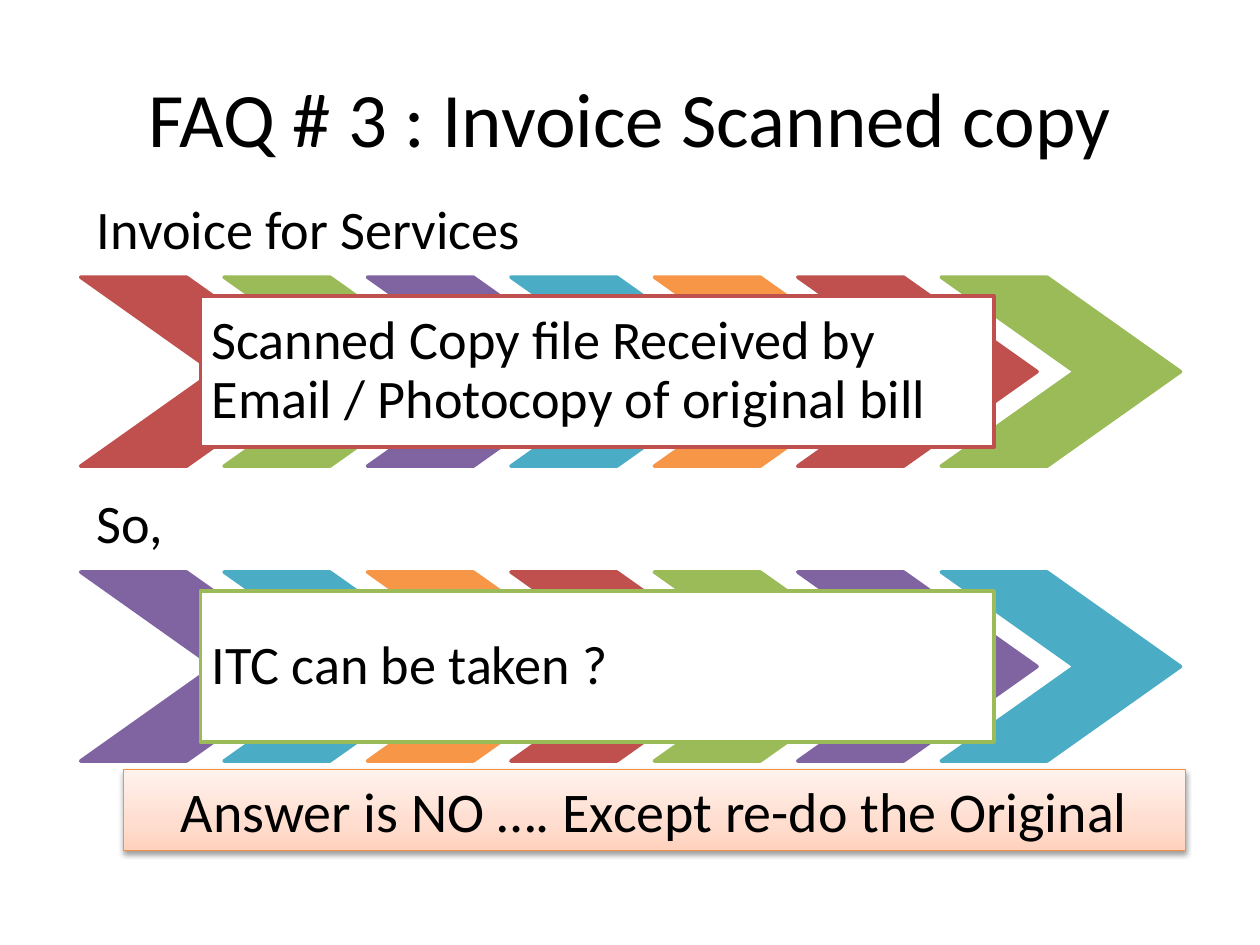
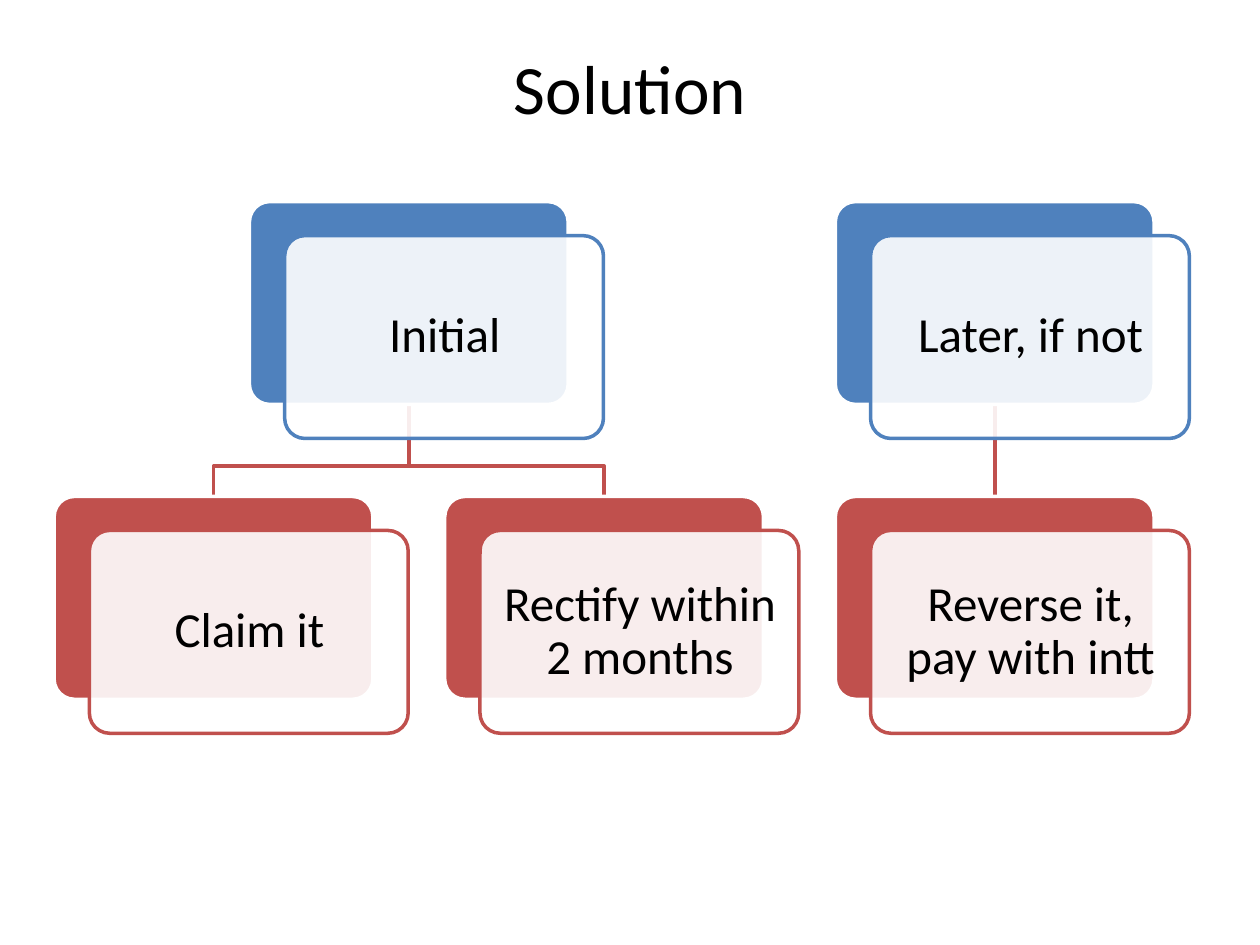
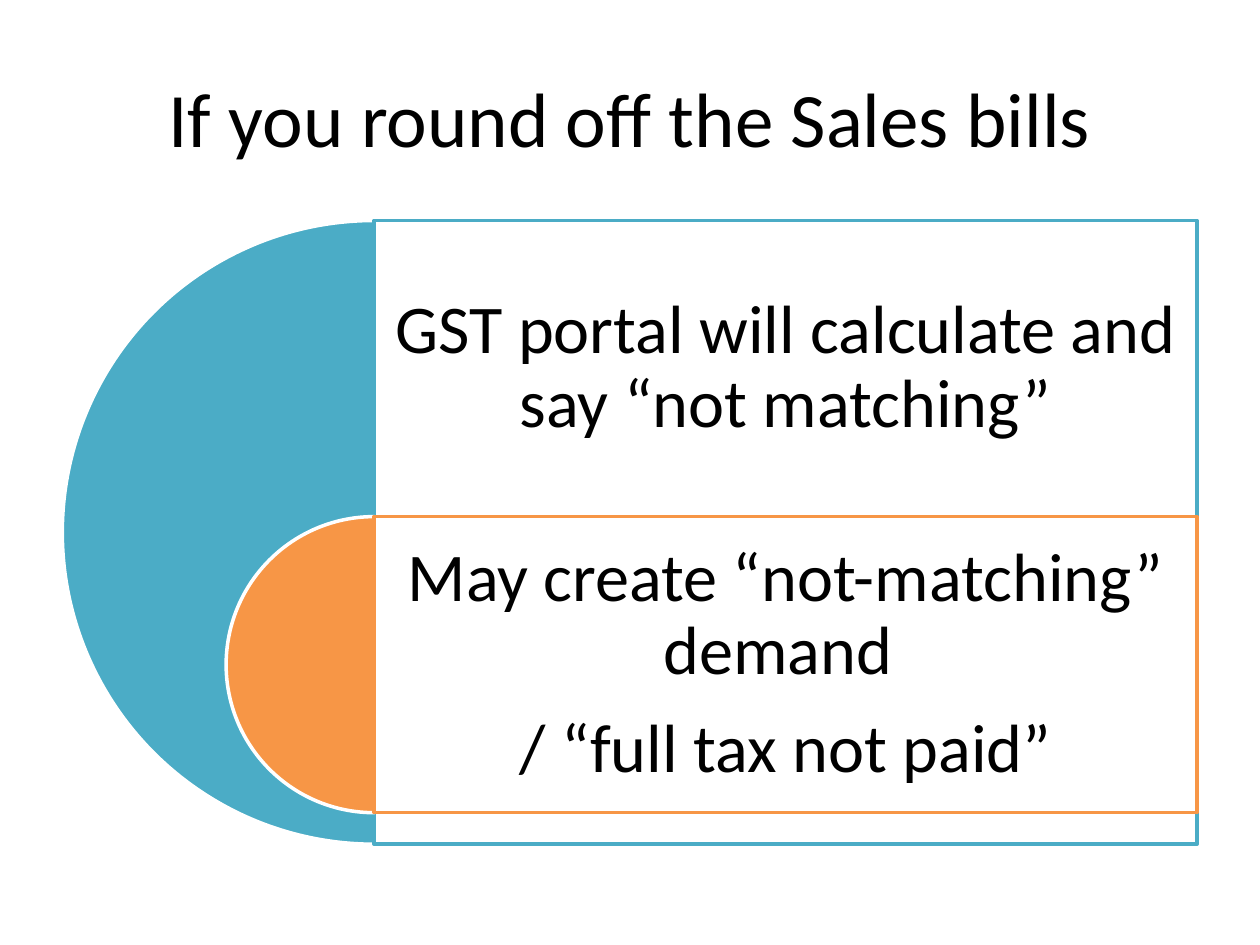
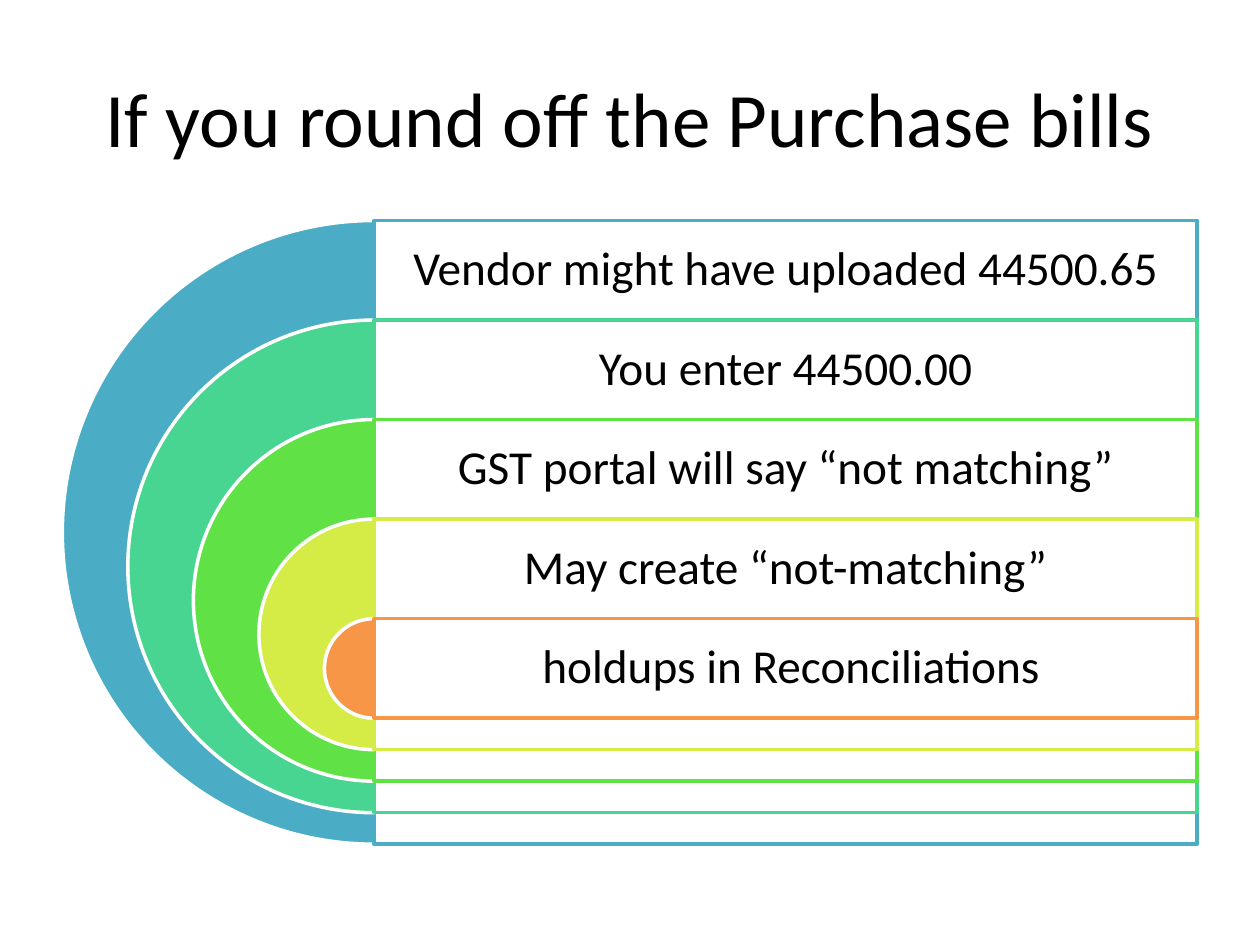
"""Builds four slides on invoice copies, their solution and rounding off bills."""
import copy

import lxml.etree
import pptx
import pptx.dml.color
import pptx.enum.shapes
import pptx.enum.text
import pptx.oxml.ns
import pptx.util

RGB = pptx.dml.color.RGBColor
BLACK = RGB(0x00, 0x00, 0x00)
WHITE = RGB(0xFF, 0xFF, 0xFF)
BLUE = RGB(0x4F, 0x81, 0xBD)
RED = RGB(0xC0, 0x50, 0x4D)
GREEN = RGB(0x9B, 0xBB, 0x59)
PURPLE = RGB(0x80, 0x64, 0xA2)
TEAL = RGB(0x4B, 0xAC, 0xC6)
ORANGE = RGB(0xF7, 0x96, 0x46)
MINT = RGB(0x48, 0xD4, 0x91)
LIME = RGB(0x60, 0xE1, 0x46)
LEMON = RGB(0xD5, 0xEC, 0x46)
AMBER = RGB(0xF6, 0x92, 0x40)
BLUSH = [(0, RGB(0xFF, 0xD2, 0xBD)), (0.35, RGB(0xFF, 0xDE, 0xD0)), (1, RGB(0xFF, 0xF2, 0xED))]
HUES = [RED, GREEN, PURPLE, TEAL, ORANGE]

FONT = "Calibri"
Inches = pptx.util.Inches
Pt = pptx.util.Pt
SHAPE = pptx.enum.shapes.MSO_SHAPE
ALIGN = pptx.enum.text.PP_ALIGN
ANCHOR = pptx.enum.text.MSO_ANCHOR
qn = pptx.oxml.ns.qn


def write(frame, text, size=31, align=ALIGN.CENTER, anchor=ANCHOR.MIDDLE, inset=None, lead=0.9):
    """Fill a text frame, one paragraph per line of text."""
    frame.word_wrap = True
    frame.vertical_anchor = anchor
    if inset is not None:
        frame.margin_left = frame.margin_right = Inches(inset)
        frame.margin_top = frame.margin_bottom = Inches(inset)
    for i, line in enumerate(text.split("\n")):
        para = frame.add_paragraph() if i else frame.paragraphs[0]
        para.alignment = align
        para.line_spacing = lead
        para.space_after = Pt(0.35 * size) if lead < 1 else Pt(0)
        run = para.add_run()
        run.text = line
        run.font.name = FONT
        run.font.size = Pt(size)
        run.font.color.rgb = BLACK


def draw(slide, kind, box, fill, line, width=2, turns=(), alpha=100):
    """Add a preset shape without shadow; box is left, top, width, height."""
    shape = slide.shapes.add_shape(kind, *map(Inches, box))
    shape.shadow.inherit = False
    for i, turn in enumerate(turns):
        shape.adjustments[i] = turn
    shape.fill.solid()
    shape.fill.fore_color.rgb = fill
    shape.line.color.rgb = line
    shape.line.width = Pt(width)
    if alpha < 100:
        tint = shape.element.spPr.find(qn("a:solidFill"))[0]
        lxml.etree.SubElement(tint, qn("a:alpha"), val=str(alpha * 1000))
    return shape


deck = pptx.Presentation()
deck.slide_width = Inches(10)
deck.slide_height = Inches(7.5)

slides = []
for title, size, height in [
    ("FAQ # 3 : Invoice Scanned copy", 44, 1.25),
    ("Solution", 39.6, 0.77),
    ("If you round off the Sales bills", 44, 1.25),
    ("If you round off the Purchase bills", 44, 1.25),
]:
    slide = deck.slides.add_slide(deck.slide_layouts[5])
    head = slide.shapes.title
    head.left, head.top, head.width, head.height = map(Inches, (0.5, 0.3, 9, height))
    write(head.text_frame, title, size=size, lead=1)
    slides.append(slide)
faq, fix, sales, buys = slides

rows = [
    ("Invoice for Services", "Scanned Copy file Received by Email / Photocopy of original bill"),
    ("So,", "ITC can be taken ?"),
]
for row, (label, text) in enumerate(rows):
    top = 1.46 + 2.34 * row
    area = faq.shapes.add_textbox(*map(Inches, (0.64, top, 8.1, 0.74)))
    write(area.text_frame, label, align=ALIGN.LEFT, anchor=ANCHOR.BOTTOM, inset=0.13)
    for i in range(7):
        hue = HUES[(i + 2 * row) % 5]
        draw(faq, SHAPE.CHEVRON, (0.64 + 6.83 / 6 * i, top + 0.74, 1.9, 1.5), hue, hue, turns=[0.706])
    box = (1.59, top + 0.89, 6.3, 1.2)
    draw(faq, SHAPE.RECTANGLE, box, WHITE, HUES[row])
    area = faq.shapes.add_textbox(*map(Inches, box))
    write(area.text_frame, text, align=ALIGN.LEFT, inset=0.09)

reply = draw(faq, SHAPE.RECTANGLE, (0.98, 6.11, 8.43, 0.64), WHITE, AMBER, width=0.75)
write(reply.text_frame, "Answer is NO …. Except re-do the Original", size=32, lead=1)
reply.fill.gradient()
reply.fill.gradient_angle = 90
stops = reply.element.spPr.find(qn("a:gradFill")).find(qn("a:gsLst"))
stops.append(copy.deepcopy(stops[0]))
for stop, (place, hue) in zip(reply.fill.gradient_stops, BLUSH):
    stop.position = place
    stop.color.rgb = hue
glow = lxml.etree.SubElement(
    reply.element.spPr.find(qn("a:effectLst")), qn("a:outerShdw"),
    blurRad=str(Pt(3.1)), dist=str(Pt(1.6)), dir="5400000", rotWithShape="0")
shade = lxml.etree.SubElement(glow, qn("a:srgbClr"), val=str(BLACK))
lxml.etree.SubElement(shade, qn("a:alpha"), val="38000")

WIDE, HIGH, STEP = 2.53, 1.61, 3.1
TOPS = [1.6, 3.94]
MID = 0.43 + WIDE / 2
for start, end in [(2, 2), (0.5, 1), (0.5, 0)]:
    x, last = Inches(MID + STEP * start), Inches(MID + STEP * end)
    y, bend, foot = map(Inches, (3.2, 3.7, TOPS[1]))
    if start == end:
        link = fix.shapes.add_connector(pptx.enum.shapes.MSO_CONNECTOR.STRAIGHT, x, y, last, foot)
    else:
        pen = fix.shapes.build_freeform(x, y)
        pen.add_line_segments([(x, bend), (last, bend), (last, foot)], close=False)
        link = pen.convert_to_shape()
        link.fill.background()
    link.line.color.rgb = RED
    link.line.width = Pt(2)
    lxml.etree.SubElement(link.element.spPr, qn("a:effectLst"))

cards = [
    (0.5, 0, "Initial"),
    (0, 1, "Claim it"),
    (1, 1, "Rectify within 2 months"),
    (2, 0, "Later, if not"),
    (2, 1, "Reverse it, pay with intt"),
]
for col, row, text in cards:
    left, top, hue = 0.43 + STEP * col, TOPS[row], [BLUE, RED][row]
    draw(fix, SHAPE.ROUNDED_RECTANGLE, (left, top, WIDE, HIGH), hue, WHITE, turns=[0.1])
    left, top = left + 0.28, top + 0.27
    draw(fix, SHAPE.ROUNDED_RECTANGLE, (left, top, WIDE, HIGH), WHITE, hue, turns=[0.1], alpha=90)
    area = fix.shapes.add_textbox(*map(Inches, (left + 0.05, top + 0.05, 2.44, 1.51)))
    write(area.text_frame, text, size=28, inset=0.12)

SPAN, GAP, AXIS = 4.95, 0.25, 2.97
stacks = [
    (sales, 39, 0.16, [
        (TEAL, "GST portal will calculate and say “not matching”"),
        (ORANGE, "May create “not-matching” demand \n/ “full tax not paid”"),
    ]),
    (buys, 27, 0.11, [
        (TEAL, "Vendor might have uploaded 44500.65"),
        (MINT, "You enter 44500.00"),
        (LIME, "GST portal will say “not matching”"),
        (LEMON, "May create “not-matching”"),
        (ORANGE, " holdups in Reconciliations"),
    ]),
]
for slide, size, inset, items in stacks:
    band = (SPAN - GAP * (len(items) - 1)) / len(items)
    for i, (hue, text) in enumerate(items):
        top, side = 1.75 + band * i, SPAN - (band + GAP) * i
        draw(slide, SHAPE.PIE, (AXIS - side / 2, top, side, side), hue, WHITE, turns=[54, 162])
        draw(slide, SHAPE.RECTANGLE, (AXIS, top, 6.53, side), WHITE, hue, alpha=90)
        area = slide.shapes.add_textbox(*map(Inches, (AXIS, top, 6.53, band)))
        write(area.text_frame, text, size=size, inset=inset)

deck.save("out.pptx")
